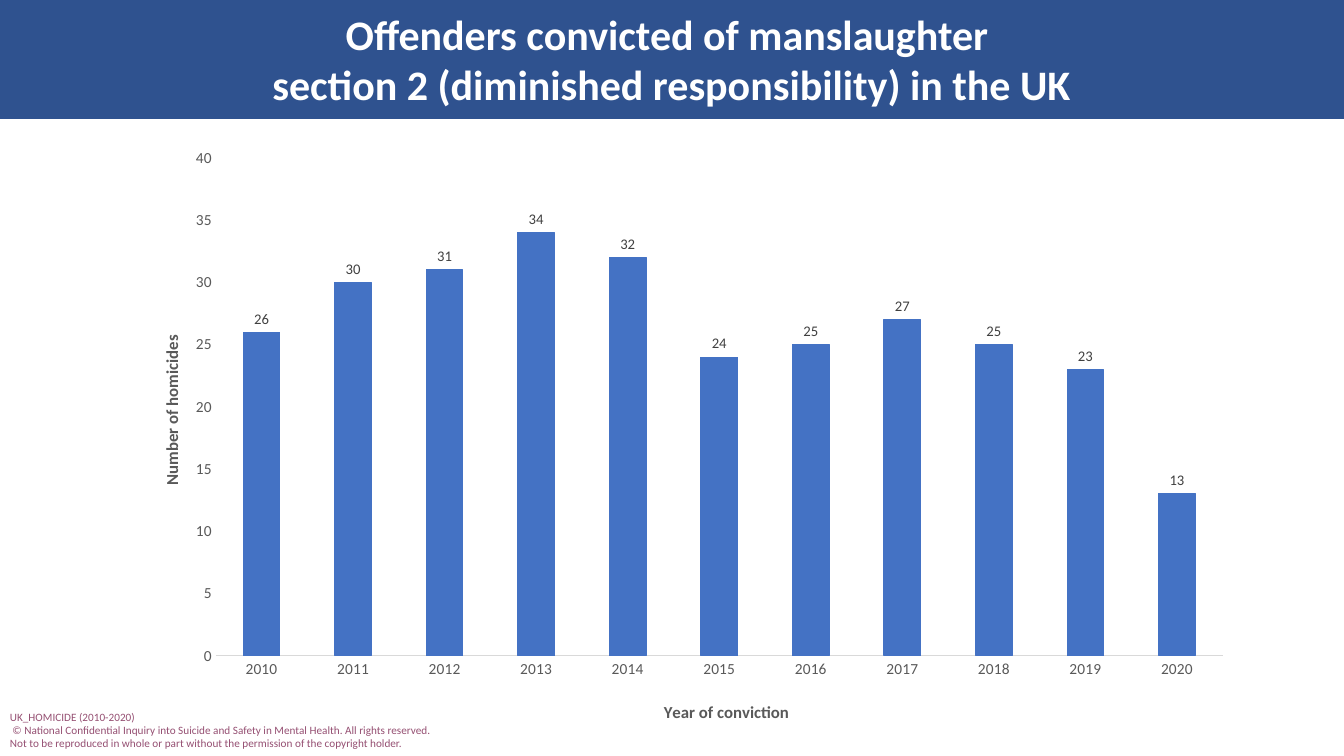
import lxml.etree
import pptx
import pptx.chart.data
import pptx.dml.color
import pptx.enum.chart
import pptx.enum.shapes
import pptx.enum.text
import pptx.oxml
import pptx.oxml.ns
import pptx.util

qn = pptx.oxml.ns.qn
EMU_PER_PX = 914400 / 100.8
CONVICTIONS = {
    "2010": 26, "2011": 30, "2012": 31, "2013": 34, "2014": 32, "2015": 24,
    "2016": 25, "2017": 27, "2018": 25, "2019": 23, "2020": 13,
}


def px(length):
    return round(length * EMU_PER_PX)


def rgb(hex_colour):
    return pptx.dml.color.RGBColor.from_string(hex_colour)


def style_font(font, size, color, bold=False, name="Calibri"):
    font.name = name
    font.size = pptx.util.Pt(size)
    font.bold = bold
    font.color.rgb = rgb(color)


def write(frame, *lines, align=None, **style):
    """Fill a text frame with one paragraph per line."""
    for index, line in enumerate(lines):
        paragraph = frame.add_paragraph() if index else frame.paragraphs[0]
        paragraph.alignment = align
        run = paragraph.add_run()
        run.text = line
        style_font(run.font, **style)


def set_layout(parent, target=None, **fractions):
    """Place a chart part by fractions of the chart's size."""
    layout = parent.find(qn("c:layout"))
    if layout is None:
        layout = pptx.oxml.parse_xml(
            "<c:layout %s/>" % pptx.oxml.ns.nsdecls("c"))
        parent.insert(0, layout)
    for child in list(layout):
        layout.remove(child)
    manual = lxml.etree.SubElement(layout, qn("c:manualLayout"))
    settings = {"layoutTarget": target} if target else {}
    settings.update(xMode="edge", yMode="edge", **fractions)
    for tag, value in settings.items():
        lxml.etree.SubElement(manual, qn("c:" + tag)).set("val", str(value))


class HomicideSlide:
    band_fill, bar_fill = "2F528F", "4472C4"
    axis_ink, label_ink, axis_line = "595959", "404040", "D9D9D9"
    title_ink, credit_ink = "FFFFFF", "954F72"

    def __init__(self, presentation):
        self.slide = presentation.slides.add_slide(presentation.slide_layouts[5])

    def band(self, *box):
        """Add a filled strip behind everything else."""
        strip = self.slide.shapes.add_shape(
            pptx.enum.shapes.MSO_SHAPE.RECTANGLE, *map(px, box))
        strip.shadow.inherit = False
        strip.fill.solid()
        strip.fill.fore_color.rgb = rgb(self.band_fill)
        strip.line.fill.background()
        self.slide.shapes._spTree.insert(2, strip._element)

    def title(self, box, *lines):
        heading = self.slide.shapes.title
        heading.left, heading.top, heading.width, heading.height = map(px, box)
        frame = heading.text_frame
        frame.word_wrap = True
        frame.auto_size = pptx.enum.text.MSO_AUTO_SIZE.NONE
        frame.vertical_anchor = pptx.enum.text.MSO_ANCHOR.MIDDLE
        write(frame, *lines, align=pptx.enum.text.PP_ALIGN.CENTER,
              size=30, color=self.title_ink, bold=True)

    def credit(self, box, *lines):
        frame = self.slide.shapes.add_textbox(*map(px, box)).text_frame
        frame.word_wrap = False
        frame.auto_size = pptx.enum.text.MSO_AUTO_SIZE.SHAPE_TO_FIT_TEXT
        write(frame, *lines, size=8, color=self.credit_ink)

    def axis(self, axis, caption, x, y, rotation=0):
        axis.major_tick_mark = pptx.enum.chart.XL_TICK_MARK.NONE
        axis.has_major_gridlines = False
        style_font(axis.tick_labels.font, 11, self.axis_ink)
        frame = axis.axis_title.text_frame
        write(frame, caption, size=12, color=self.axis_ink, bold=True)
        body = frame._txBody.bodyPr
        body.set("rot", str(rotation * 60000))
        body.set("vert", "horz")
        set_layout(axis.axis_title._element, x=x, y=y)

    def column_chart(self, box, values):
        data = pptx.chart.data.CategoryChartData()
        data.categories = list(values)
        data.add_series("Series 1", list(values.values()))
        chart = self.slide.shapes.add_chart(
            pptx.enum.chart.XL_CHART_TYPE.COLUMN_CLUSTERED,
            *map(px, box), data).chart
        chart.has_legend = False
        chart.has_title = False
        style_font(chart.font, 10, "000000")

        plot = chart.plots[0]
        plot.vary_by_categories = False
        plot.gap_width = 150
        set_layout(chart._chartSpace.chart.plotArea, "inner",
                   x=0.11, y=0.05, w=0.86, h=0.83)
        bars = plot.series[0]
        bars.format.fill.solid()
        bars.format.fill.fore_color.rgb = rgb(self.bar_fill)
        bars.format.line.color.rgb = rgb(self.bar_fill)
        bars.format.line.width = pptx.util.Pt(0.75)
        labels = bars.data_labels
        labels.show_value = True
        labels.position = pptx.enum.chart.XL_LABEL_POSITION.OUTSIDE_END
        style_font(labels.font, 10.5, self.label_ink)

        years, counts = chart.category_axis, chart.value_axis
        self.axis(years, "Year of conviction", 0.49, 0.95)
        years.format.line.color.rgb = rgb(self.axis_line)
        years.format.line.width = pptx.util.Pt(0.75)
        self.axis(counts, "Number of homicides", 0.06, 0.34, rotation=-90)
        counts.format.line.fill.background()
        counts.minimum_scale, counts.maximum_scale = 0, 40
        counts.major_unit = 5


def main():
    presentation = pptx.Presentation()
    presentation.slide_width, presentation.slide_height = px(1344), px(756)
    page = HomicideSlide(presentation)
    page.band(0, 0, 1344, 119)
    page.title((0, 13, 1344, 92), "Offenders convicted of manslaughter ",
               "section 2 (diminished responsibility) in the UK")
    page.credit(
        (0, 705, 444, 51),
        "UK_HOMICIDE (2010-2020)",
        " © National Confidential Inquiry into Suicide and Safety in Mental "
        "Health. All rights reserved.",
        "Not to be reproduced in whole or part without the permission of the "
        "copyright holder.")
    page.column_chart((87, 128, 1171, 600), CONVICTIONS)
    presentation.save("out.pptx")


if __name__ == "__main__":
    main()
